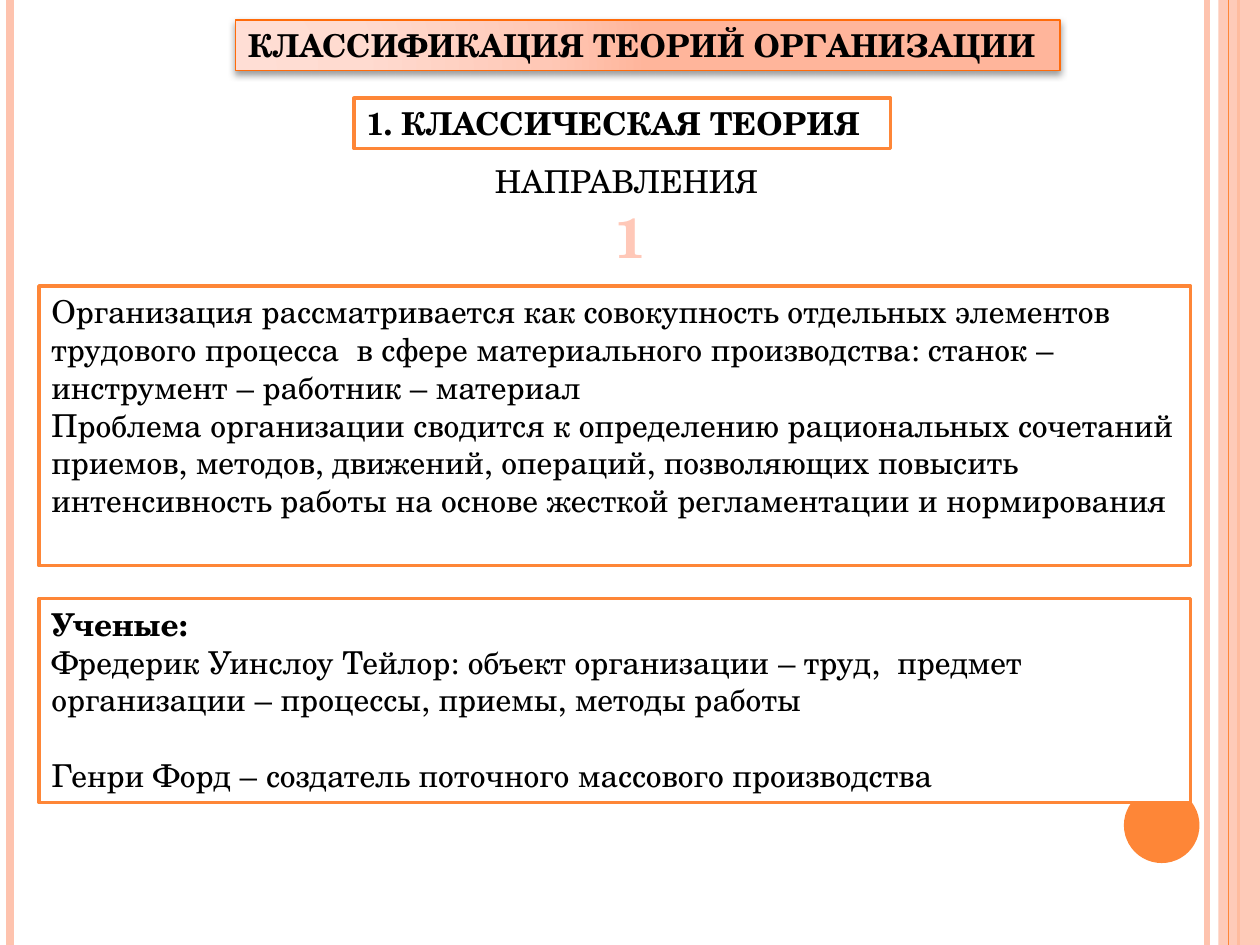
from dataclasses import dataclass

from lxml.etree import SubElement
from pptx import Presentation
from pptx.dml.color import RGBColor
from pptx.enum.shapes import MSO_CONNECTOR, MSO_SHAPE
from pptx.enum.text import MSO_ANCHOR, MSO_AUTO_SIZE, PP_ALIGN
from pptx.oxml import parse_xml
from pptx.oxml.ns import nsdecls, qn
from pptx.util import Inches, Pt


@dataclass(frozen=True)
class Theme:
    font: str = "TeX Gyre Schola"
    ink: str = "000000"
    paper: str = "FFFFFF"
    orange: str = "FE8637"
    peach: str = "FEC3AE"
    number: str = "FFC8B8"
    title_line: str = "FF6B0A"
    title_stops: tuple = ((0, "FFDED5"), (30, "FFDBD0"), (75, "FFC8B6"), (100, "FFB59B"))
    body_size: int = 18
    number_size: int = 32


theme = Theme()


def rgb(value):
    return RGBColor.from_string(value)


def write(shape, *paragraphs, size=theme.body_size, color=theme.ink, bold=False,
          align=PP_ALIGN.LEFT):
    frame = shape.text_frame
    frame.word_wrap = True
    frame.auto_size = MSO_AUTO_SIZE.NONE
    frame.vertical_anchor = MSO_ANCHOR.TOP
    for index, text in enumerate(paragraphs):
        paragraph = frame.paragraphs[0] if index == 0 else frame.add_paragraph()
        paragraph.alignment = align
        run = paragraph.add_run()
        run.text = text
        run.font.name = theme.font
        run.font.size = Pt(size)
        run.font.bold = bold
        run.font.color.rgb = rgb(color)
    return frame


prs = Presentation()
prs.slide_width, prs.slide_height = Inches(10), Inches(7.5)
slide = prs.slides.add_slide(prs.slide_layouts[5])
shapes = slide.shapes

# Side stripes: x, colour, width in points
for x, color, width in ((9.58, theme.peach, 3), (0.08, theme.peach, 4.5),
                        (9.83, theme.orange, 1.5), (9.75, theme.orange, 0.75)):
    if x == 9.83:
        band_line_start = len(shapes)
    stripe = shapes.add_connector(MSO_CONNECTOR.STRAIGHT, Inches(x), 0, Inches(x), prs.slide_height)
    stripe.line.color.rgb = rgb(color)
    stripe.line.width = Pt(width)
    SubElement(stripe._element.spPr, qn("a:effectLst"))

# Translucent right band and corner circle
band = shapes.add_shape(MSO_SHAPE.RECTANGLE, Inches(9.67), 0, Inches(0.33), prs.slide_height)
circle = shapes.add_shape(MSO_SHAPE.OVAL, Inches(8.92), Inches(6.25), Inches(0.6), Inches(0.6))
for decoration, color in ((band, theme.peach), (circle, theme.orange)):
    decoration.shadow.inherit = False
    decoration.fill.solid()
    decoration.fill.fore_color.rgb = rgb(color)
    decoration.line.fill.background()
band_color = band._element.spPr.find(qn("a:solidFill"))[0]
SubElement(band_color, qn("a:alpha"), val="87000")
stripe._element.addprevious(band._element)

# Title with radial gradient and soft shadow
title = shapes.title
title.left, title.top, title.width, title.height = map(Inches, (1.87, 0.16, 6.54, 0.4))
write(title, "КЛАССИФИКАЦИЯ ТЕОРИЙ ОРГАНИЗАЦИИ", bold=True)
title.line.color.rgb = rgb(theme.title_line)
title.line.width = Pt(1)
stops = "".join(f'<a:gs pos="{pos * 1000}"><a:srgbClr val="{color}"/></a:gs>'
                for pos, color in theme.title_stops)
title_props = title._element.spPr
title_props.find(qn("a:ln")).addprevious(parse_xml(
    f'<a:gradFill {nsdecls("a")}><a:gsLst>{stops}</a:gsLst><a:path path="circle">'
    '<a:fillToRect l="5000" t="100000" r="120000" b="10000"/></a:path></a:gradFill>'))
title_props.append(parse_xml(
    f'<a:effectLst {nsdecls("a")}><a:outerShdw blurRad="{Pt(4)}" dist="{Pt(2)}" dir="5400000" '
    f'rotWithShape="0"><a:srgbClr val="{theme.ink}"><a:alpha val="40000"/></a:srgbClr>'
    '</a:outerShdw></a:effectLst>'))

# Framed boxes: theory name, approach, scholars
frames = []
for box in ((2.81, 0.78, 4.26, 0.4), (0.31, 2.27, 9.14, 2.22), (0.31, 4.75, 9.14, 1.62)):
    framed = shapes.add_shape(MSO_SHAPE.RECTANGLE, *map(Inches, box))
    framed.shadow.inherit = False
    framed.fill.solid()
    framed.fill.fore_color.rgb = rgb(theme.paper)
    framed.line.color.rgb = rgb(theme.orange)
    framed.line.width = Pt(2)
    frames.append(framed)
theory, approach, scholars = frames

write(theory, "1. КЛАССИЧЕСКАЯ ТЕОРИЯ", bold=True)
write(approach,
      "Организация рассматривается как совокупность отдельных элементов трудового процесса  "
      "в сфере материального производства: станок – инструмент – работник – материал",
      "Проблема организации сводится к определению рациональных сочетаний приемов, методов, "
      "движений, операций, позволяющих повысить интенсивность работы на основе жесткой "
      "регламентации и нормирования")
scholar_list = write(scholars, "Ученые:",
                     "Фредерик Уинслоу Тейлор: объект организации – труд,  предмет",
                     "организации – процессы, приемы, методы работы",
                     "Генри Форд – создатель поточного массового производства",
                     align=PP_ALIGN.JUSTIFY).paragraphs
scholar_list[0].runs[0].font.bold = True
scholar_list[-1].space_before = Pt(21.6)

# Directions heading and number
directions = shapes.add_textbox(Inches(3.83), Inches(1.24), Inches(2.41), Inches(0.4))
write(directions, "НАПРАВЛЕНИЯ")
number = shapes.add_textbox(Inches(4.77), Inches(1.56), Inches(0.47), Inches(0.64))
write(number, "1", size=theme.number_size, color=theme.number, bold=True, align=PP_ALIGN.CENTER)

prs.save("out.pptx")
